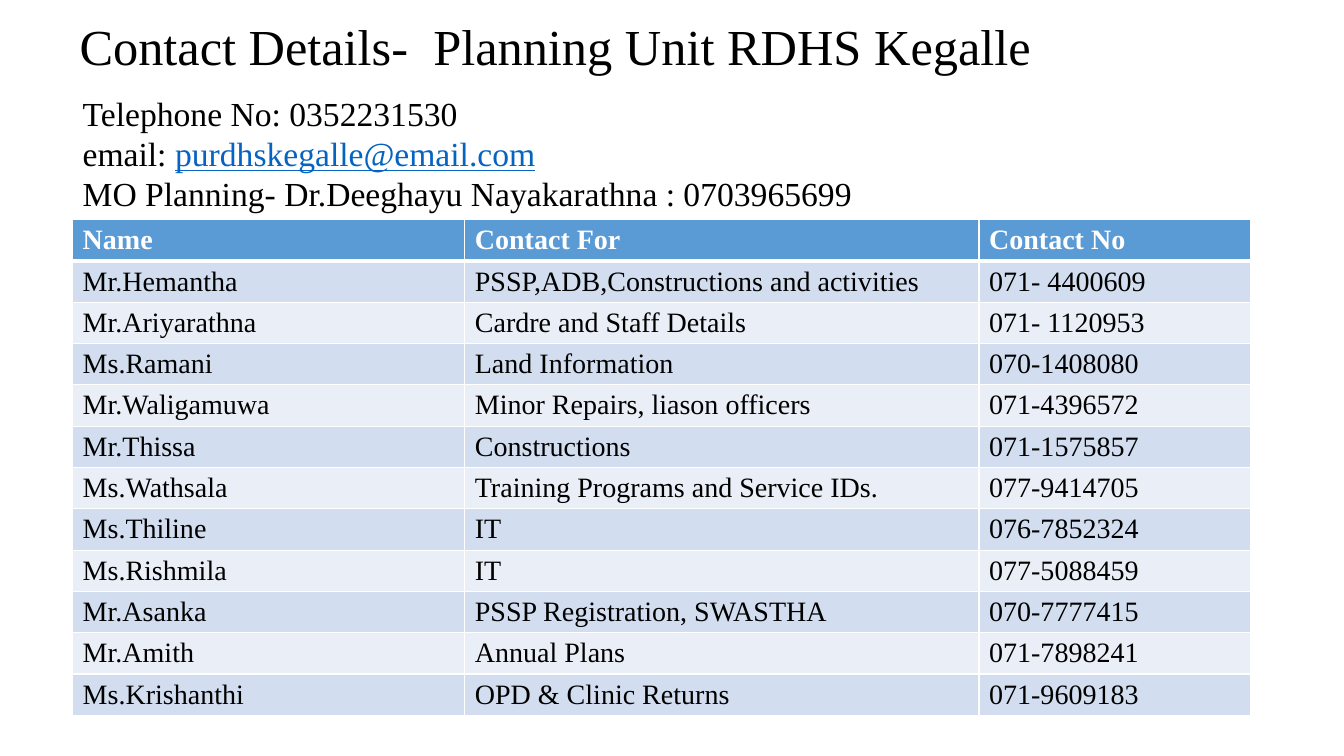
from lxml import etree
from pptx import Presentation
from pptx.dml.color import RGBColor
from pptx.enum.text import MSO_ANCHOR, MSO_AUTO_SIZE, PP_ALIGN
from pptx.oxml.ns import qn
from pptx.util import Inches, Pt

TITLE = "Contact Details-  Planning Unit RDHS Kegalle"
LINK = "purdhskegalle@email.com"
OFFICE_LINES = [
    ["Telephone No: 0352231530"],
    ["email: ", LINK],
    ["MO Planning- Dr.Deeghayu Nayakarathna : 0703965699"],
]
CONTACTS = [
    ("Name", "Contact For", "Contact No"),
    ("Mr.Hemantha", "PSSP,ADB,Constructions and activities", "071- 4400609"),
    ("Mr.Ariyarathna", "Cardre and Staff Details", "071- 1120953"),
    ("Ms.Ramani", "Land Information", "070-1408080"),
    ("Mr.Waligamuwa", "Minor Repairs, liason officers", "071-4396572"),
    ("Mr.Thissa", "Constructions", "071-1575857"),
    ("Ms.Wathsala", "Training Programs and Service IDs.", "077-9414705"),
    ("Ms.Thiline", "IT", "076-7852324"),
    ("Ms.Rishmila", "IT", "077-5088459"),
    ("Mr.Asanka", "PSSP Registration, SWASTHA", "070-7777415"),
    ("Mr.Amith", "Annual Plans", "071-7898241"),
    ("Ms.Krishanthi", "OPD & Clinic Returns", "071-9609183"),
]

FONT = "Times New Roman"
BLACK = RGBColor(0x00, 0x00, 0x00)
WHITE = RGBColor(0xFF, 0xFF, 0xFF)
LINK_BLUE = RGBColor(0x05, 0x63, 0xC1)
HEADER_BLUE = RGBColor(0x5B, 0x9B, 0xD5)
BANDS = (RGBColor(0xEA, 0xEF, 0xF7), RGBColor(0xD2, 0xDE, 0xEF))

MIDDLE, TOP = MSO_ANCHOR.MIDDLE, MSO_ANCHOR.TOP
LEFT, CENTER = PP_ALIGN.LEFT, PP_ALIGN.CENTER
NO_AUTOFIT = MSO_AUTO_SIZE.NONE

LEFT_EDGE, TABLE_TOP = 0.72, 2.18
COLUMN_WIDTHS = (3.89, 5.1, 2.69)
HEADER_HEIGHT, ROW_HEIGHT = 0.39, 0.41


def add_span(para, text, size, color=BLACK, bold=False, underline=False):
    span = para.add_run()
    span.text = text
    font = span.font
    font.name, font.size, font.bold, font.underline = FONT, Pt(size), bold, underline
    font.color.rgb = color


def place(box, left, top, width, height, anchor, wrap):
    box.left, box.top = Inches(left), Inches(top)
    box.width, box.height = Inches(width), Inches(height)
    frame = box.text_frame
    frame.auto_size = NO_AUTOFIT
    frame.vertical_anchor, frame.word_wrap = anchor, wrap
    return frame


def add_border(cell, side, points):
    line = etree.SubElement(cell._tc.get_or_add_tcPr(), qn(f"a:ln{side}"), w=str(Pt(points)))
    fill = etree.SubElement(line, qn("a:solidFill"))
    etree.SubElement(fill, qn("a:srgbClr"), val=str(WHITE))


def add_title(slide):
    frame = place(slide.shapes.title, 0.64, 0.1, 9.74, 0.71, MIDDLE, False)
    para = frame.paragraphs[0]
    para.alignment = CENTER
    add_span(para, TITLE, 36)


def add_office_lines(slide):
    frame = place(slide.placeholders[1], LEFT_EDGE, 0.87, 9.28, 1.31, TOP, True)
    for index, texts in enumerate(OFFICE_LINES):
        para = frame.add_paragraph() if index else frame.paragraphs[0]
        para.alignment, para.space_before = LEFT, Pt(0)
        properties = para._p.get_or_add_pPr()
        properties.set("marL", "0")
        properties.set("indent", "0")
        etree.SubElement(properties, qn("a:buNone"))
        for text in texts:
            is_link = text == LINK
            add_span(para, text, 24, LINK_BLUE if is_link else BLACK, underline=is_link)


def add_contact_table(slide):
    heights = [HEADER_HEIGHT] + [ROW_HEIGHT] * (len(CONTACTS) - 1)
    table = slide.shapes.add_table(
        len(CONTACTS), len(COLUMN_WIDTHS), Inches(LEFT_EDGE), Inches(TABLE_TOP),
        Inches(sum(COLUMN_WIDTHS)), Inches(sum(heights))).table
    for column, width in zip(table.columns, COLUMN_WIDTHS):
        column.width = Inches(width)
    for index, (row, texts) in enumerate(zip(table.rows, CONTACTS)):
        row.height = Inches(heights[index])
        header = index == 0
        for cell, text in zip(row.cells, texts):
            add_span(cell.text_frame.paragraphs[0], text, 20,
                     WHITE if header else BLACK, bold=header)
            for side in "LRTB":
                under_header = (index, side) in ((0, "B"), (1, "T"))
                add_border(cell, side, 3 if under_header else 1)
            cell.fill.solid()
            cell.fill.fore_color.rgb = HEADER_BLUE if header else BANDS[index % 2]


def main():
    deck = Presentation()
    deck.slide_width, deck.slide_height = Inches(13.33), Inches(7.5)
    slide = deck.slides.add_slide(deck.slide_layouts[1])
    add_title(slide)
    add_office_lines(slide)
    add_contact_table(slide)
    deck.save("out.pptx")


if __name__ == "__main__":
    main()
